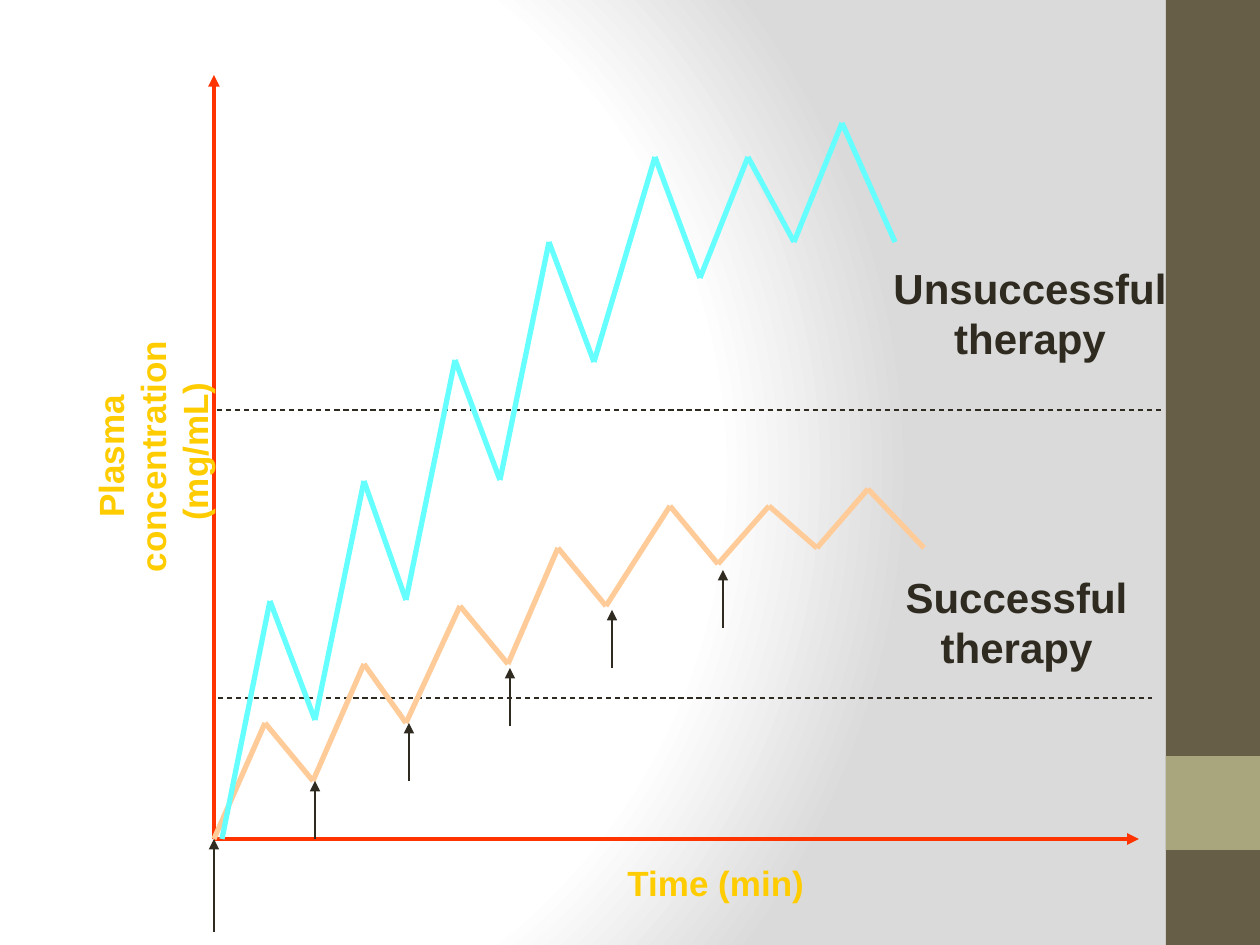
from itertools import pairwise

from lxml.etree import SubElement
from pptx import Presentation
from pptx.dml.color import RGBColor
from pptx.enum.dml import MSO_LINE_DASH_STYLE as Dash
from pptx.enum.shapes import MSO_CONNECTOR as Connector
from pptx.enum.shapes import MSO_SHAPE as Shape
from pptx.enum.text import MSO_AUTO_SIZE as AutoSize
from pptx.enum.text import PP_ALIGN as Align
from pptx.oxml import parse_xml
from pptx.oxml.ns import nsdecls, qn
from pptx.util import Emu, Pt

PX_PER_INCH = 126
DARK, RED, YELLOW = "2F2B20", "FF3300", "FFCC00"
ORANGE, CYAN = "FFCC99", "66FFFF"
BROWN, OLIVE = "675E47", "A9A57C"
ORIGIN = (214, 839)

SUCCESSFUL = [
    ORIGIN, (265, 723), (313, 781), (364, 664), (406, 723),
    (460, 606), (508, 664), (558, 548), (606, 606), (670, 506),
    (718, 564), (769, 506), (817, 548), (868, 489), (924, 548),
]
UNSUCCESSFUL = [
    (222, 839), (270, 601), (315, 720), (364, 481), (406, 600),
    (455, 360), (500, 480), (549, 242), (594, 362), (655, 157),
    (700, 278), (748, 157), (794, 242), (842, 123), (895, 242),
]
DOSES = [(315, 781), (409, 723), (510, 668), (612, 610), (723, 570)]
DOSE_LENGTH = 58


def px(value):
    return Emu(round(value * 914400 / PX_PER_INCH))


def color(value):
    return RGBColor.from_string(value)


def set_background(slide):
    stops = "".join(
        f'<a:gs pos="{position}"><a:srgbClr val="{value}"/></a:gs>'
        for position, value in [(0, "FFFFFF"), (75000, "FFFFFF"), (100000, "DADADA")]
    )
    background = parse_xml(
        f'<p:bg {nsdecls("p", "a")}><p:bgPr><a:gradFill rotWithShape="1">'
        f"<a:gsLst>{stops}</a:gsLst>"
        '<a:path path="circle">'
        '<a:fillToRect l="20000" t="50000" r="100000" b="50000"/></a:path>'
        "</a:gradFill><a:effectLst/></p:bgPr></p:bg>"
    )
    slide.element.cSld.insert(0, background)


def add_bar(slide, left, top, width, height, fill):
    shape = slide.shapes.add_shape(
        Shape.RECTANGLE, px(left), px(top), px(width), px(height)
    )
    shape.shadow.inherit = False
    shape.fill.solid()
    shape.fill.fore_color.rgb = color(fill)
    shape.line.fill.background()


def add_line(slide, start, end, stroke=DARK, width=0.75, dash=None, arrow=False):
    connector = slide.shapes.add_connector(
        Connector.STRAIGHT, *map(px, (*start, *end))
    )
    connector.line.color.rgb = color(stroke)
    connector.line.width = Pt(width)
    if dash:
        connector.line.dash_style = dash
    if arrow:
        SubElement(connector.line._get_or_add_ln(), qn("a:tailEnd"), type="triangle")
    SubElement(connector._element.spPr, qn("a:effectLst"))


def add_curve(slide, points, stroke):
    for start, end in pairwise(points):
        add_line(slide, start, end, stroke, width=3)


def add_text(slide, lines, left, top, width, height, *, size, fill,
             align=Align.CENTER, rotation=0):
    box = slide.shapes.add_textbox(px(left), px(top), px(width), px(height))
    box.rotation = rotation
    frame = box.text_frame
    frame.word_wrap = False
    frame.auto_size = AutoSize.NONE
    frame.text = "\n".join(lines)
    for paragraph in frame.paragraphs:
        paragraph.alignment = align
        for run in paragraph.runs:
            run.font.name = "Arial"
            run.font.size = Pt(size)
            run.font.bold = True
            run.font.color.rgb = color(fill)


def main():
    presentation = Presentation()
    presentation.slide_width, presentation.slide_height = px(1260), px(945)
    slide = presentation.slides.add_slide(presentation.slide_layouts[6])
    set_background(slide)
    add_bar(slide, 1166, 0, 94, 945, BROWN)
    add_bar(slide, 1166, 756, 94, 94, OLIVE)

    add_text(slide, ["Time (min)"], 615, 855, 202, 54,
             size=20, fill=YELLOW, align=Align.LEFT)
    for end in [(214, 75), (1139, 839)]:
        add_line(slide, ORIGIN, end, RED, width=2.25, arrow=True)
    add_text(slide, ["Plasma\vconcentration", " (mg/mL)"], -63, 408, 389, 97,
             size=20, fill=YELLOW, rotation=270)

    for left, right, y in [(217, 1162, 410), (218, 1152, 698)]:
        add_line(slide, (left, y), (right, y), dash=Dash.DASH)
    add_curve(slide, SUCCESSFUL, ORANGE)
    add_curve(slide, UNSUCCESSFUL, CYAN)

    add_text(slide, ["Unsuccessful", "therapy"], 881, 256, 298, 113,
             size=24, fill=DARK)
    add_text(slide, ["Successful", "therapy"], 893, 565, 247, 113,
             size=24, fill=DARK)
    add_line(slide, (214, 932), ORIGIN, arrow=True)
    for x, y in DOSES:
        add_line(slide, (x, y + DOSE_LENGTH), (x, y), arrow=True)

    presentation.save("out.pptx")


if __name__ == "__main__":
    main()
